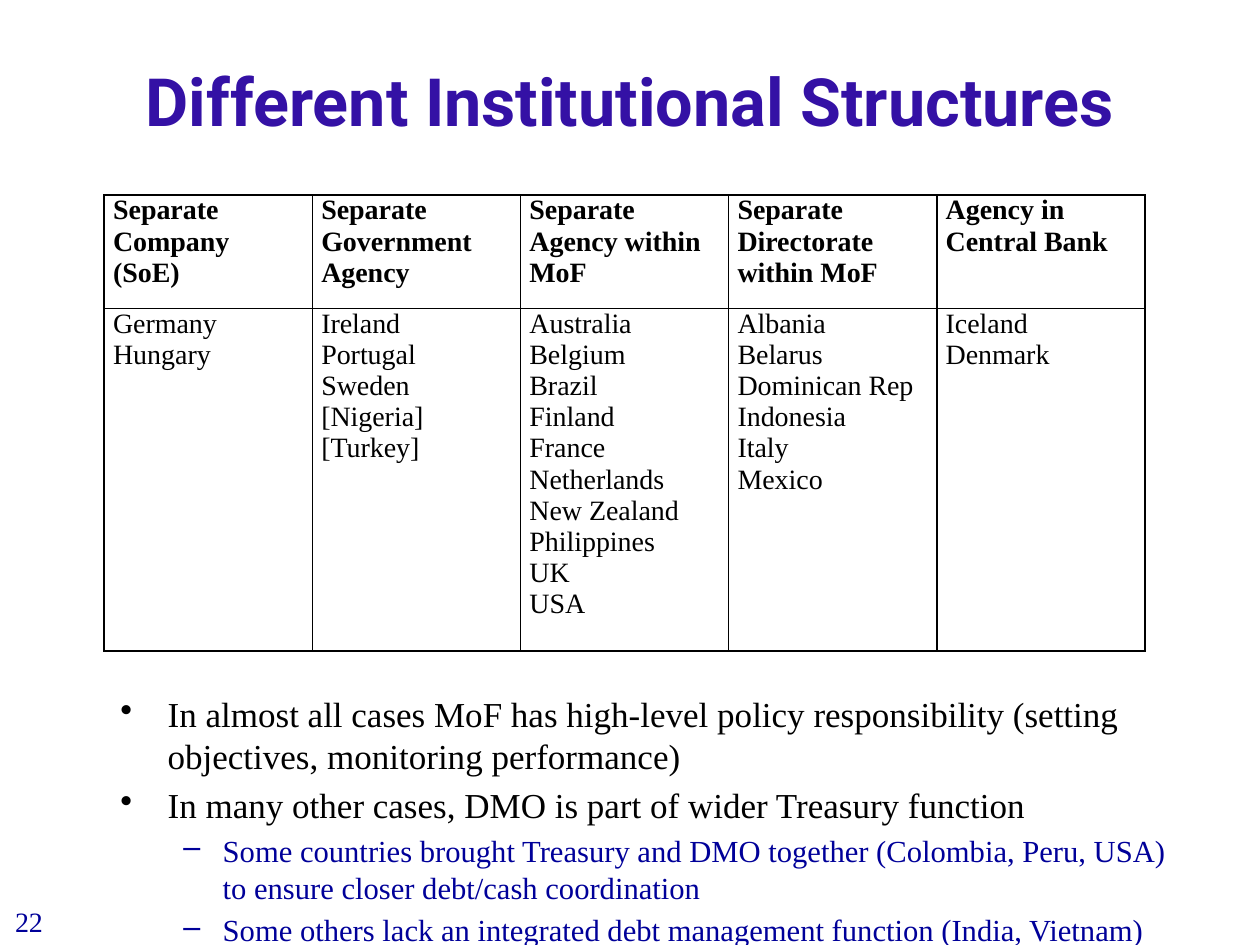
from lxml import etree
from pptx import Presentation
from pptx import util as u
from pptx.dml import color
from pptx.enum import text
from pptx.oxml import ns

SERIF = "Times New Roman"
BLACK, NAVY, INDIGO = "000000", "000099", "3411A5"
STRUCTURES = {
    "Separate Company\n(SoE)": "Germany\nHungary",
    "Separate Government Agency": "Ireland\nPortugal\nSweden\n[Nigeria]\n[Turkey]",
    "Separate Agency within MoF": "Australia\nBelgium\nBrazil\nFinland\nFrance\nNetherlands\n"
                                  "New Zealand\nPhilippines\nUK\nUSA",
    "Separate Directorate within MoF": "Albania\nBelarus\nDominican Rep\nIndonesia\nItaly\nMexico",
    "Agency in Central Bank": "Iceland\nDenmark",
}
POINTS = [
    (0, "In almost all cases MoF has high-level policy responsibility "
        "(setting objectives, monitoring performance)"),
    (0, "In many other cases, DMO is part of wider Treasury function"),
    (1, "Some countries brought Treasury and DMO together (Colombia, Peru, USA) "
        "to ensure closer debt/cash coordination"),
    (1, "Some others lack an integrated debt management function (India, Vietnam)"),
]
LEVELS = [
    {"bullet": "•", "left": 0.95, "hanging": 0.95, "size": 20, "colour": BLACK},
    {"bullet": "–", "left": 2.06, "hanging": 0.79, "size": 17.5, "colour": NAVY},
]


def rgb(value):
    """Turn a hex string into a colour."""
    return color.RGBColor.from_string(value)


def add_run(paragraph, wording, size, colour, font=SERIF, bold=False):
    """Add one styled run to a paragraph."""
    run = paragraph.add_run()
    run.text = wording
    run.font.name, run.font.size, run.font.bold = font, u.Pt(size), bold
    run.font.color.rgb = rgb(colour)


def next_paragraph(frame, index):
    """Return the first paragraph of a frame, or a new one after it."""
    return frame.add_paragraph() if index else frame.paragraphs[0]


def add_box(slide, left, top, width, height, wrap=True):
    """Add an empty text box and return its text frame."""
    shape = slide.shapes.add_textbox(u.Cm(left), u.Cm(top), u.Cm(width), u.Cm(height))
    shape.text_frame.word_wrap = wrap
    return shape.text_frame


def add_title(slide, wording):
    """Add the centred slide title."""
    frame = add_box(slide, 1.9, 0.33, 21.6, 3.38)
    frame.vertical_anchor = text.MSO_ANCHOR.MIDDLE
    paragraph = frame.paragraphs[0]
    paragraph.alignment = text.PP_ALIGN.CENTER
    add_run(paragraph, wording, 38, INDIGO, "Roboto", True)


def set_borders(cell):
    """Draw a thin black line on each side of a cell."""
    properties = cell._tc.get_or_add_tcPr()
    for side in ("lnL", "lnR", "lnT", "lnB"):
        line = etree.SubElement(properties, ns.qn(f"a:{side}"), w=str(u.Pt(1)))
        fill = etree.SubElement(line, ns.qn("a:solidFill"))
        etree.SubElement(fill, ns.qn("a:srgbClr"), val=BLACK)


def fill_cell(cell, wording, bold):
    """Write lines of text into a bordered cell without fill."""
    cell.margin_left = cell.margin_right = u.Cm(0.18)
    cell.margin_top = cell.margin_bottom = 0
    for index, line in enumerate(wording.split("\n")):
        add_run(next_paragraph(cell.text_frame, index), line, 16, BLACK, bold=bold)
    set_borders(cell)
    cell.fill.background()


def add_structures(slide):
    """Add the table of countries by institutional structure."""
    heights = (2.29, 6.9)
    table = slide.shapes.add_table(
        2, len(STRUCTURES), u.Cm(2.1), u.Cm(3.93), u.Cm(20.98), u.Cm(sum(heights))).table
    for row, height in zip(table.rows, heights):
        row.height = u.Cm(height)
    for column, (heading, countries) in enumerate(STRUCTURES.items()):
        fill_cell(table.cell(0, column), heading, True)
        fill_cell(table.cell(1, column), countries, False)


def add_bullet(paragraph, bullet, left, hanging, colour):
    """Give a paragraph a hanging bullet."""
    properties = paragraph._p.get_or_add_pPr()
    properties.set("marL", str(u.Cm(left)))
    properties.set("indent", str(-u.Cm(hanging)))
    bullet_colour = etree.SubElement(properties, ns.qn("a:buClr"))
    etree.SubElement(bullet_colour, ns.qn("a:srgbClr"), val=colour)
    etree.SubElement(properties, ns.qn("a:buChar"), char=bullet)


def add_points(slide):
    """Add the two-level bullet list."""
    frame = add_box(slide, 2.18, 13.84, 21.6, 4.6)
    for index, (depth, wording) in enumerate(POINTS):
        level = LEVELS[depth]
        paragraph = next_paragraph(frame, index)
        paragraph.level = depth
        add_bullet(paragraph, level["bullet"], level["left"], level["hanging"], level["colour"])
        if index:
            paragraph.space_before = u.Pt(level["size"] * 0.2)
        add_run(paragraph, wording, level["size"], level["colour"])


def add_page_number(slide, number):
    """Add the page number in the lower left corner."""
    frame = add_box(slide, 0, 18.1, 1.17, 0.94, wrap=False)
    frame.auto_size = text.MSO_AUTO_SIZE.SHAPE_TO_FIT_TEXT
    frame.paragraphs[0].alignment = text.PP_ALIGN.CENTER
    add_run(frame.paragraphs[0], number, 16, NAVY)


def main():
    """Build and save the slide."""
    presentation = Presentation()
    presentation.slide_width, presentation.slide_height = u.Cm(25.4), u.Cm(19.05)
    slide = presentation.slides.add_slide(presentation.slide_layouts[6])
    add_page_number(slide, "22")
    add_title(slide, "Different Institutional Structures")
    add_points(slide)
    add_structures(slide)
    presentation.save("out.pptx")


if __name__ == "__main__":
    main()
